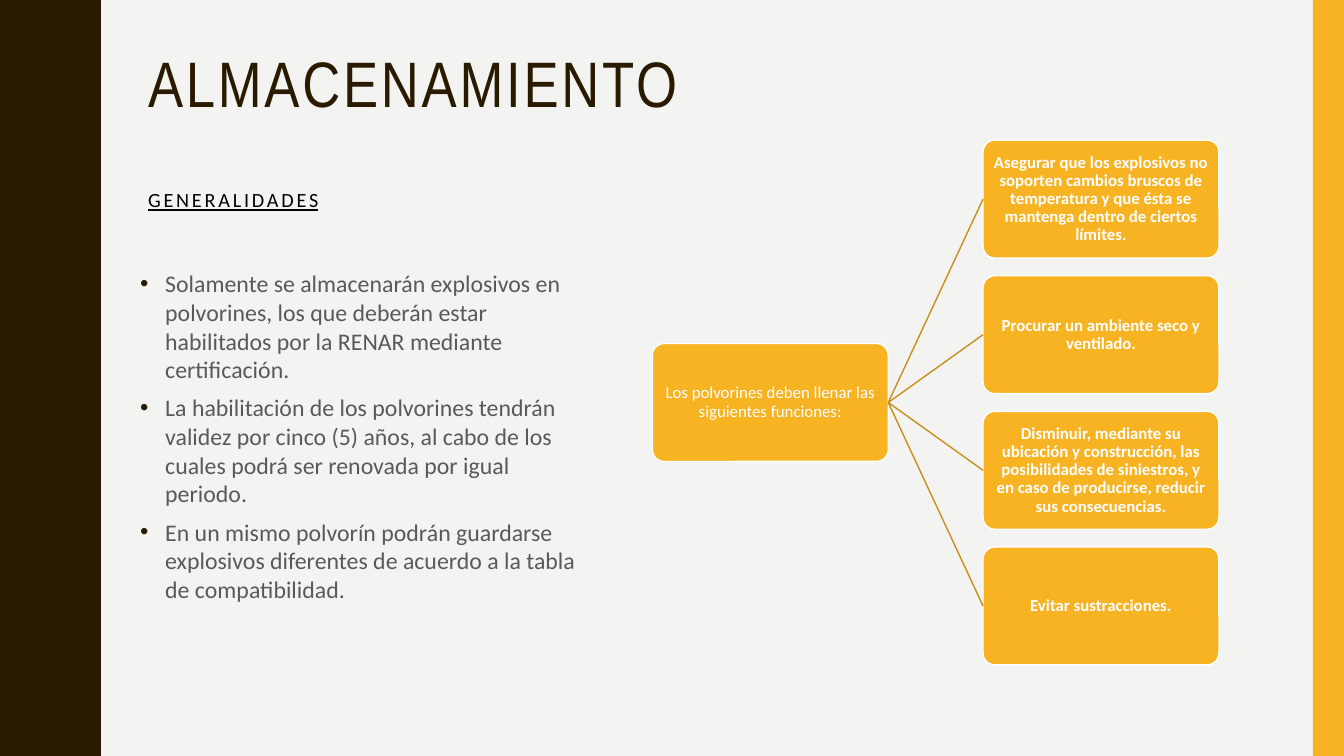
from pptx import Presentation
from pptx.dml.color import RGBColor
from pptx.enum.shapes import MSO_CONNECTOR, MSO_SHAPE
from pptx.enum.text import MSO_ANCHOR, PP_ALIGN
from pptx.oxml.ns import qn
from pptx.util import Inches, Pt
from lxml import etree

STRAIGHT = MSO_CONNECTOR.STRAIGHT
RECT, ROUND = MSO_SHAPE.RECTANGLE, MSO_SHAPE.ROUNDED_RECTANGLE
MIDDLE, CENTER = MSO_ANCHOR.MIDDLE, PP_ALIGN.CENTER

COLORS = {"back": "F3F3F2", "dark": "2A1A00", "gold": "F8B323", "line": "C78F1C",
          "gray": "595959", "white": "FFFFFF", "black": "000000"}

TITLE = "ALMACENAMIENTO"
SUBTITLE = "GENERALIDADES"
RULES = [
    "Solamente se almacenarán explosivos en polvorines, los que deberán estar "
    "habilitados por la RENAR mediante certificación.",
    "La habilitación de los polvorines tendrán validez por cinco (5) años, al cabo "
    "de los cuales podrá ser renovada por igual periodo.",
    "En un mismo polvorín podrán guardarse explosivos diferentes de acuerdo a la "
    "tabla de compatibilidad.",
]
HUB = "Los polvorines deben llenar las siguientes funciones:"
TASKS = [
    "Asegurar que los explosivos no soporten cambios bruscos de temperatura y que "
    "ésta se mantenga dentro de ciertos límites.",
    "Procurar un ambiente seco y ventilado.",
    "Disminuir, mediante su ubicación y construcción, las posibilidades de "
    "siniestros, y en caso de producirse, reducir sus consecuencias.",
    "Evitar sustracciones.",
]

WIDTH, HEIGHT = 13.33, 7.5
# Edge of the first half wave, as (x, y)
CURVE = [(0.78, 0), (0.78, 0.07), (0.79, 0.14), (0.8, 0.2), (0.81, 0.25),
         (0.83, 0.29), (0.85, 0.33), (0.87, 0.38), (0.89, 0.42), (0.91, 0.46),
         (0.93, 0.5), (0.95, 0.55), (0.96, 0.61), (0.97, 0.68), (0.97, 0.75)]
PERIOD = 1.5
BOX_W, BOX_H = 2.34, 1.17
STEP = BOX_H * 1.15
HUB_X, TASK_X, TASK_Y = 6.47, 9.75, 1.39


def rgb(name):
    return RGBColor.from_string(COLORS[name])


def paint(shape, fill, line=None):
    shape.shadow.inherit = False
    shape.fill.solid()
    shape.fill.fore_color.rgb = rgb(fill)
    if line:
        shape.line.color.rgb = rgb(line)
        shape.line.width = Pt(1)
    else:
        shape.line.fill.background()


def write(frame, text, size, color, font="Calibri", bold=False, under=False,
          align=None, lead=None, before=0, track=0, bullet=False):
    """Add one paragraph, using the empty first one if there is one."""
    first = frame.paragraphs[0]
    para = frame.add_paragraph() if first.runs else first
    if align is not None:
        para.alignment = align
    if lead:
        para.line_spacing = lead
    para.space_before = Pt(before)
    if bullet:
        props = para._p.get_or_add_pPr()
        props.set("marL", str(Inches(0.25)))
        props.set("indent", str(-Inches(0.25)))
        tint = etree.SubElement(props, qn("a:buClr"))
        etree.SubElement(tint, qn("a:srgbClr"), val=COLORS["dark"])
        etree.SubElement(props, qn("a:buFont"), typeface="Arial")
        etree.SubElement(props, qn("a:buChar"), char="•")
    run = para.add_run()
    run.text = text
    run.font.name, run.font.size = font, Pt(size)
    run.font.bold, run.font.underline = bold, under
    run.font.color.rgb = rgb(color)
    if track:
        run.font._element.set("spc", str(track * 100))


def text_box(shapes, x, y, w, h):
    frame = shapes.add_textbox(*map(Inches, (x, y, w, h))).text_frame
    frame.word_wrap = True
    return frame


def draw_wave(shapes):
    back = [(x, PERIOD - y) for x, y in CURVE[-2:0:-1]]
    edge = [(x, y + PERIOD * i) for i in range(int(HEIGHT / PERIOD))
            for x, y in CURVE + back]
    form = shapes.build_freeform(0, 0, scale=Inches(1))
    form.add_line_segments(edge + [(CURVE[0][0], HEIGHT), (0, HEIGHT)], close=True)
    paint(form.convert_to_shape(), "dark")


def draw_box(shapes, x, y, text, bold):
    box = shapes.add_shape(ROUND, *map(Inches, (x, y, BOX_W, BOX_H)))
    box.adjustments[0] = 0.1
    paint(box, "gold", "white")
    frame = box.text_frame
    frame.word_wrap = True
    frame.vertical_anchor = MIDDLE
    frame.margin_left = frame.margin_right = Inches(0.05)
    frame.margin_top = frame.margin_bottom = Inches(0.05)
    write(frame, text, 12, "white", bold=bold, align=CENTER, lead=0.9)
    return box


def join(shapes, start, end):
    link = shapes.add_connector(STRAIGHT, 0, 0, 0, 0)
    link.begin_connect(start, 3)
    link.end_connect(end, 1)
    link.line.color.rgb = rgb("line")
    link.line.width = Pt(1)
    etree.SubElement(link._element.spPr, qn("a:effectLst"))


def main():
    deck = Presentation()
    deck.slide_width, deck.slide_height = Inches(WIDTH), Inches(HEIGHT)
    slide = deck.slides.add_slide(deck.slide_layouts[6])
    slide.background.fill.solid()
    slide.background.fill.fore_color.rgb = rgb("back")
    shapes = slide.shapes

    draw_wave(shapes)
    bar = shapes.add_shape(RECT, *map(Inches, (13.02, 0, 0.31, HEIGHT)))
    paint(bar, "gold")

    head = text_box(shapes, 1.37, 0.42, 11.13, 1.32)
    head.margin_top = Inches(0.1)
    write(head, TITLE, 45.9, "dark", font="Arial Narrow", lead=0.9, track=2)
    write(head, SUBTITLE, 14.4, "black", under=True, lead=0.9, before=49, track=2)

    body = text_box(shapes, 1.29, 2.62, 4.72, 3.78)
    for i, rule in enumerate(RULES):
        write(body, rule, 17, "gray", before=7 if i else 0, bullet=True)

    mid = TASK_Y + STEP * (len(TASKS) - 1) / 2
    hub = draw_box(shapes, HUB_X, mid, HUB, False)
    for i, task in enumerate(TASKS):
        join(shapes, hub, draw_box(shapes, TASK_X, TASK_Y + STEP * i, task, True))

    deck.save("out.pptx")


if __name__ == "__main__":
    main()
